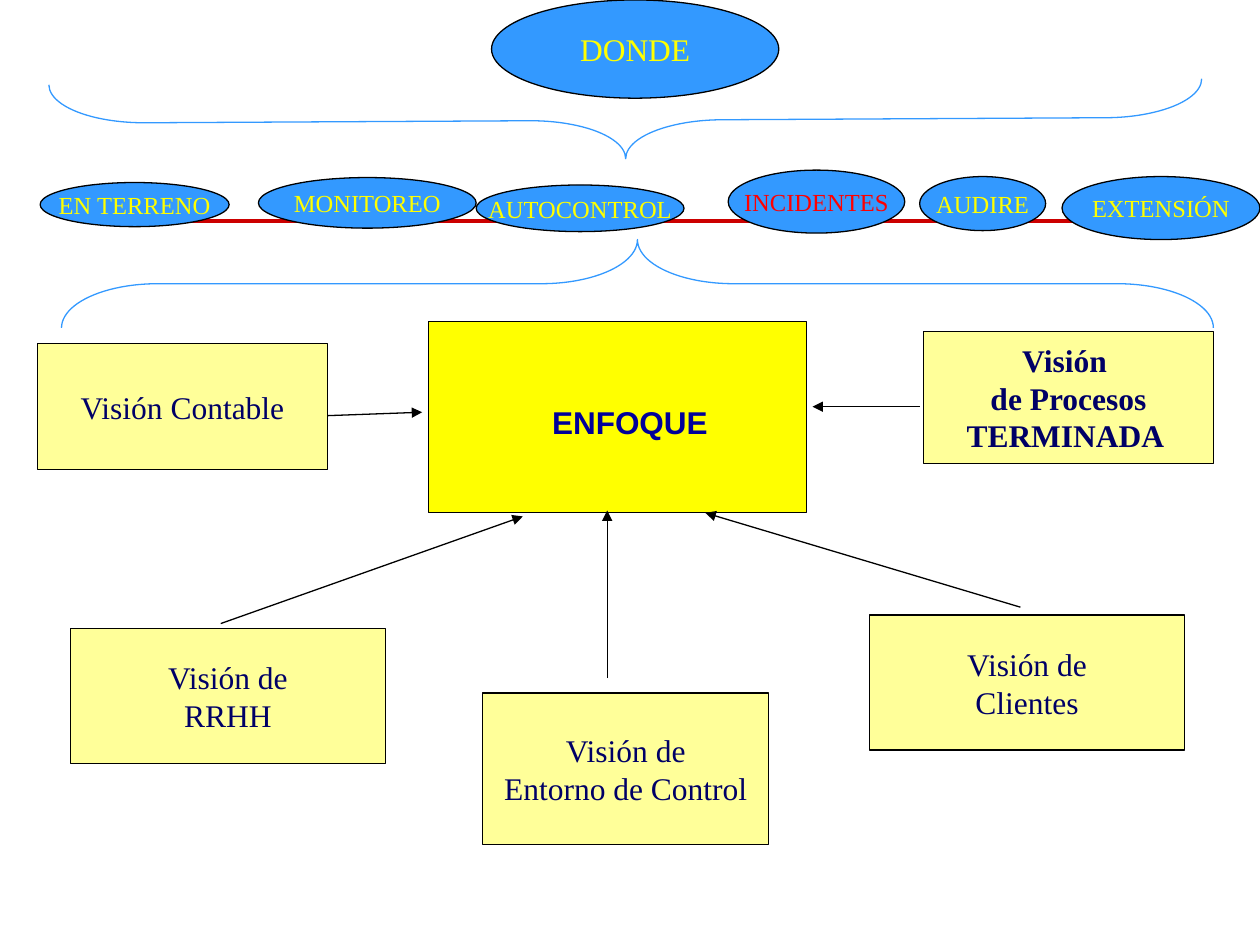
from pptx import Presentation
from pptx.dml.color import RGBColor
from pptx.enum.shapes import MSO_CONNECTOR, MSO_SHAPE
from pptx.enum.text import MSO_ANCHOR, PP_ALIGN
from pptx.oxml.ns import qn
from pptx.util import Cm, Pt
from lxml.etree import SubElement

COLOURS = {
    "black": "000000",
    "axis": "CC0000",
    "place": "3399FF",
    "place text": "FFFF00",
    "alert": "FF0000",
    "focus": "FFFF00",
    "focus text": "000099",
    "vision": "FFFF99",
    "vision text": "000066",
}
SERIF, SANS = "Times New Roman", "Arial"


def rgb(name):
    return RGBColor.from_string(COLOURS[name])


def write(frame, lines, colour, size=18, font=SERIF, bold=False, wrap=False):
    frame.word_wrap = wrap
    frame.vertical_anchor = MSO_ANCHOR.MIDDLE
    for i, line in enumerate(lines):
        paragraph = frame.paragraphs[0] if i == 0 else frame.add_paragraph()
        paragraph.alignment = PP_ALIGN.CENTER
        run = paragraph.add_run()
        run.text = line
        run.font.name = font
        run.font.size = Pt(size)
        run.font.bold = bold
        run.font.color.rgb = rgb(colour)


def add_outlined(slide, preset, box, fill, line="black"):
    shape = slide.shapes.add_shape(preset, *map(Cm, box))
    shape.shadow.inherit = False
    if fill:
        shape.fill.solid()
        shape.fill.fore_color.rgb = rgb(fill)
    else:
        shape.fill.background()
    shape.line.color.rgb = rgb(line)
    shape.line.width = Pt(0.75)
    return shape


def add_line(slide, ends, colour="black", width=0.75, arrow=True):
    line = slide.shapes.add_connector(MSO_CONNECTOR.STRAIGHT, *map(Cm, ends))
    line.line.color.rgb = rgb(colour)
    line.line.width = Pt(width)
    if arrow:
        SubElement(line.line._get_or_add_ln(), qn("a:tailEnd"), type="triangle")
    SubElement(line._element.spPr, qn("a:effectLst"))


def add_lying_brace(slide, preset, box, angle, curl, flipped=False):
    """Turn an upright brace so that it fills the wide box as seen."""
    left, top, width, height = box
    upright = (left + (width - height) / 2, top + (height - width) / 2, height, width)
    brace = add_outlined(slide, preset, upright, None, "place")
    brace.adjustments[0] = curl
    brace.adjustments[1] = 0.5
    brace.rotation = angle
    if flipped:
        brace._element.spPr.find(qn("a:xfrm")).set("flipV", "1")


def add_places(slide, left, top):
    """DONDE, its brace and the row of places strung on the red axis."""
    add_line(slide, (left + 3.81, top + 4.45, left + 23.5, top + 4.45),
             "axis", 2.25, arrow=False)
    places = [
        ("DONDE", 9.91, 0, 5.79, 1.98, 18, "place text"),
        ("EN TERRENO", 0.81, 3.68, 3.81, 0.89, 14, "place text"),
        ("MONITOREO", 5.21, 3.58, 4.39, 1.02, 14, "place text"),
        ("AUTOCONTROL", 9.6, 3.73, 4.19, 0.94, 14, "place text"),
        ("INCIDENTES", 14.68, 3.43, 3.56, 1.27, 14, "alert"),
        ("AUDIRE", 18.54, 3.56, 2.54, 1.09, 14, "place text"),
        ("EXTENSIÓN", 21.41, 3.56, 3.99, 1.27, 14, "place text"),
    ]
    for label, x, y, width, height, size, colour in places:
        place = add_outlined(slide, MSO_SHAPE.OVAL,
                             (left + x, top + y, width, height), "place")
        write(place.text_frame, [label], colour, size)
    add_lying_brace(slide, MSO_SHAPE.RIGHT_BRACE,
                    (left + 0.99, top + 1.65, 23.24, 1.55), 89.7, 1.25, flipped=True)


def add_visions(slide, left, top):
    """ENFOQUE with the five visions pointing at it, under a brace."""
    add_lying_brace(slide, MSO_SHAPE.LEFT_BRACE,
                    (left + 0.48, top, 23.22, 1.78), 90, 1.09)
    add_outlined(slide, MSO_SHAPE.RECTANGLE,
                 (left + 7.88, top + 1.65, 7.62, 3.86), "focus")
    focus_title = slide.shapes.add_textbox(
        Cm(left + 7.75), Cm(top + 3.17), Cm(8.38), Cm(1.02))
    write(focus_title.text_frame, ["ENFOQUE"], "focus text",
          font=SANS, bold=True, wrap=True)

    # lines, box, arrow from and to, bold
    visions = [
        (["Visión Contable"], (0, 2.1, 5.84, 2.54), (5.84, 3.55, 7.75, 3.48), False),
        (["Visión ", "de Procesos", "TERMINADA "], (17.86, 1.85, 5.84, 2.67),
         (17.78, 3.37, 15.62, 3.37), True),
        (["Visión de", "RRHH"], (0.66, 7.84, 6.35, 2.72),
         (3.69, 7.74, 9.78, 5.58), False),
        (["Visión de", "Entorno de Control"], (8.97, 9.14, 5.77, 3.05),
         (11.48, 8.84, 11.48, 5.46), False),
        (["Visión de", "Clientes"], (16.77, 7.57, 6.35, 2.72),
         (19.81, 7.41, 13.46, 5.51), False),
    ]
    for lines, (x, y, width, height), (x1, y1, x2, y2), bold in visions:
        vision = add_outlined(slide, MSO_SHAPE.RECTANGLE,
                              (left + x, top + y, width, height), "vision")
        write(vision.text_frame, lines, "vision text", bold=bold)
        add_line(slide, (left + x1, top + y1, left + x2, top + y2))


def main():
    presentation = Presentation()
    presentation.slide_width = Cm(25.4)
    presentation.slide_height = Cm(19.05)
    slide = presentation.slides.add_slide(presentation.slide_layouts[6])
    add_places(slide, 0, 0)
    add_visions(slide, 0.76, 4.83)
    presentation.save("out.pptx")


if __name__ == "__main__":
    main()
